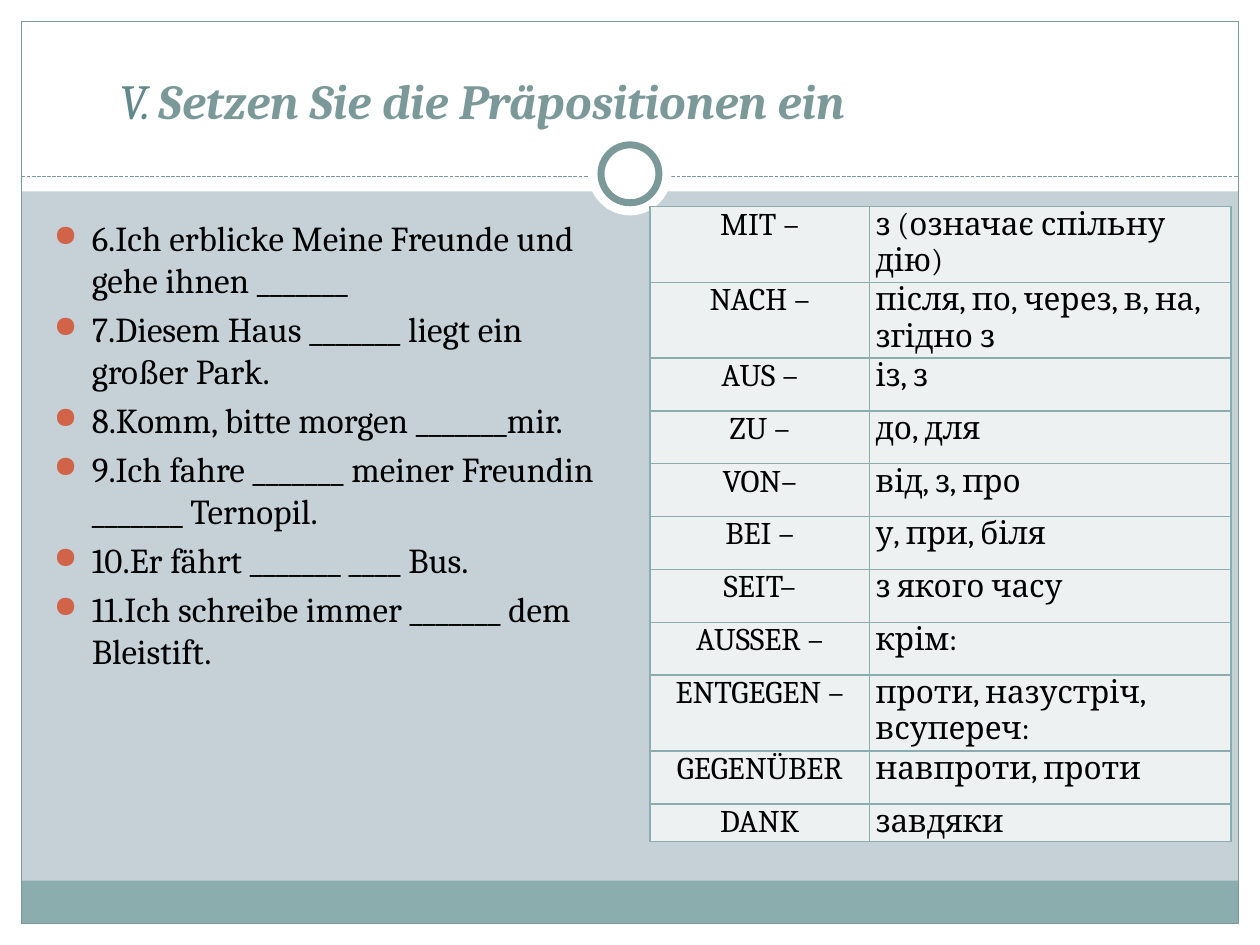
from collections import namedtuple

from lxml import etree
from pptx import Presentation
from pptx import util as u
from pptx.dml.color import RGBColor
from pptx.enum import dml, shapes, text
from pptx.oxml import ns

Box = namedtuple("Box", "left top width height")
PX = u.Inches(1) // 100
FONT = "Cambria"
WHITE = RGBColor(0xFF, 0xFF, 0xFF)
BLACK = RGBColor(0, 0, 0)
MIST = RGBColor(0xC5, 0xD1, 0xD7)
TEAL = RGBColor(0x8C, 0xAD, 0xAE)
SLATE = RGBColor(0x7C, 0x99, 0x9A)
DEEP_TEAL = RGBColor(0x61, 0x89, 0x8A)
PALE = RGBColor(0xEE, 0xF1, 0xF2)
RUST = RGBColor(0xD1, 0x63, 0x49)

SENTENCES = [
    "6.Ich erblicke Meine Freunde und gehe ihnen _______",
    "7.Diesem Haus _______ liegt ein großer Park.",
    "8.Komm, bitte morgen _______mir.",
    "9.Ich fahre _______ meiner Freundin _______ Ternopil.",
    "10.Er fährt _______ ____ Bus.",
    "11.Ich schreibe immer _______ dem Bleistift.",
]
PREPOSITIONS = [
    ("MIT –", "з (означає спільну дію)"),
    ("NACH –", "після, по, через, в, на, згідно з"),
    ("AUS –", "із, з"),
    ("ZU –", "до, для"),
    ("VON–", "від, з, про"),
    ("BEI –", "у, при, біля"),
    ("SEIT–", "з якого часу"),
    ("AUSSER –", "крім:"),
    ("ENTGEGEN –", "проти, назустріч, всупереч:"),
    ("GEGENÜBER", "навпроти, проти"),
    ("DANK", "завдяки"),
]


def emu(*lengths):
    return [length * PX for length in lengths]


def add_child(parent, tag, **attributes):
    return etree.SubElement(parent, ns.qn(tag), attributes)


def add_span(para, words, size, color=BLACK, bold=False, italic=False):
    span = para.add_run()
    span.text = words
    span.font.name = FONT
    span.font.size = u.Pt(size)
    span.font.color.rgb = color
    span.font.bold = bold
    span.font.italic = italic


def add_form(page, kind, box, fill=None, line=None, weight=0.75):
    form = page.shapes.add_shape(kind, *emu(*box))
    form.shadow.inherit = False
    if fill is None:
        form.fill.background()
    else:
        form.fill.solid()
        form.fill.fore_color.rgb = fill
    if line is None:
        form.line.fill.background()
    else:
        form.line.color.rgb = line
        form.line.width = u.Pt(weight)


def add_text_frame(page, box, anchor):
    frame = page.shapes.add_textbox(*emu(*box)).text_frame
    frame.word_wrap = True
    frame.vertical_anchor = anchor
    return frame


def add_divider(page, left, right, y):
    divider = page.shapes.add_connector(
        shapes.MSO_CONNECTOR.STRAIGHT, *emu(left, y, right, y))
    divider.line.color.rgb = SLATE
    divider.line.width = u.Pt(0.75)
    divider.line.dash_style = dml.MSO_LINE.SQUARE_DOT
    add_child(divider.element.spPr, "a:effectLst")


def add_frame(page, box):
    left, top, width, height = box
    margin, header, footer = 17, 152, 34
    right, bottom = left + width, top + height
    inner = Box(left + margin, top + margin, width - 2 * margin, height - 2 * margin)
    rectangle, oval = shapes.MSO_SHAPE.RECTANGLE, shapes.MSO_SHAPE.OVAL

    for edge in (
        Box(left, bottom - margin, width, margin),
        Box(left, top, width, header),
        Box(left, top, margin, height),
        Box(right - margin, top, margin, height),
    ):
        add_form(page, rectangle, edge, WHITE)
    band = Box(inner.left, bottom - margin - footer, inner.width, footer)
    add_form(page, rectangle, band, TEAL)
    add_form(page, rectangle, inner, line=SLATE)
    add_divider(page, inner.left, right - margin, top + 140)

    center_x, center_y = left + width // 2, top + 138
    for radius, line in ((33, None), (23, SLATE)):
        disc = Box(center_x - radius, center_y - radius, 2 * radius, 2 * radius)
        add_form(page, oval, disc, WHITE, line, 4)


def add_title(page, box):
    frame = add_text_frame(page, box, text.MSO_ANCHOR.BOTTOM)
    frame.margin_left = 62 * PX
    para = frame.paragraphs[0]
    add_span(para, "V.", 28, DEEP_TEAL, italic=True)
    add_span(para, " ", 20, DEEP_TEAL, bold=True, italic=True)
    add_span(para, "Setzen Sie die Präpositionen ein", 28, SLATE, bold=True, italic=True)


def add_bullet(para):
    indent = 30 * PX
    settings = para._p.get_or_add_pPr()
    settings.set("marL", str(indent))
    settings.set("indent", str(-indent))
    color = add_child(settings, "a:buClr")
    add_child(color, "a:srgbClr", val=str(RUST))
    add_child(settings, "a:buSzPct", val="85000")
    add_child(settings, "a:buChar", char="●")


def add_exercise(page, box):
    frame = add_text_frame(page, box, text.MSO_ANCHOR.TOP)
    for index, sentence in enumerate(SENTENCES):
        para = frame.add_paragraph() if index else frame.paragraphs[0]
        para.space_before = u.Pt(4)
        add_bullet(para)
        add_span(para, sentence, 20)


def style_cell(cell):
    settings = cell._tc.get_or_add_tcPr()
    for side in ("a:lnL", "a:lnR", "a:lnT", "a:lnB"):
        border = add_child(settings, side, w=str(u.Pt(1)))
        fill = add_child(border, "a:solidFill")
        add_child(fill, "a:srgbClr", val=str(TEAL))
    cell.fill.solid()
    cell.fill.fore_color.rgb = PALE
    cell.margin_left = cell.margin_right = 5 * PX
    cell.margin_top = cell.margin_bottom = 0


def add_glossary(page, box):
    table = page.shapes.add_table(len(PREPOSITIONS), 2, *emu(*box)).table
    table.first_row = table.horz_banding = False
    first_width = 174
    for column, width in zip(table.columns, (first_width, box.width - first_width)):
        column.width = width * PX
    for row in table.rows:
        row.height = 42 * PX
    table.rows[len(PREPOSITIONS) - 1].height = 21 * PX
    alignments = (text.PP_ALIGN.CENTER, text.PP_ALIGN.LEFT)
    for row, entry in zip(table.rows, PREPOSITIONS):
        for cell, words, alignment in zip(row.cells, entry, alignments):
            style_cell(cell)
            para = cell.text_frame.paragraphs[0]
            para.alignment = alignment
            add_span(para, words, 18)


def main():
    deck = Presentation()
    deck.slide_width, deck.slide_height = emu(1000, 750)
    page = deck.slides.add_slide(deck.slide_layouts[6])
    page.background.fill.solid()
    page.background.fill.fore_color.rgb = MIST
    add_frame(page, Box(0, 0, 1000, 750))
    add_title(page, Box(33, 25, 933, 83))
    add_exercise(page, Box(33, 167, 451, 583))
    add_glossary(page, Box(516, 164, 461, 441))
    deck.save("out.pptx")


if __name__ == "__main__":
    main()
